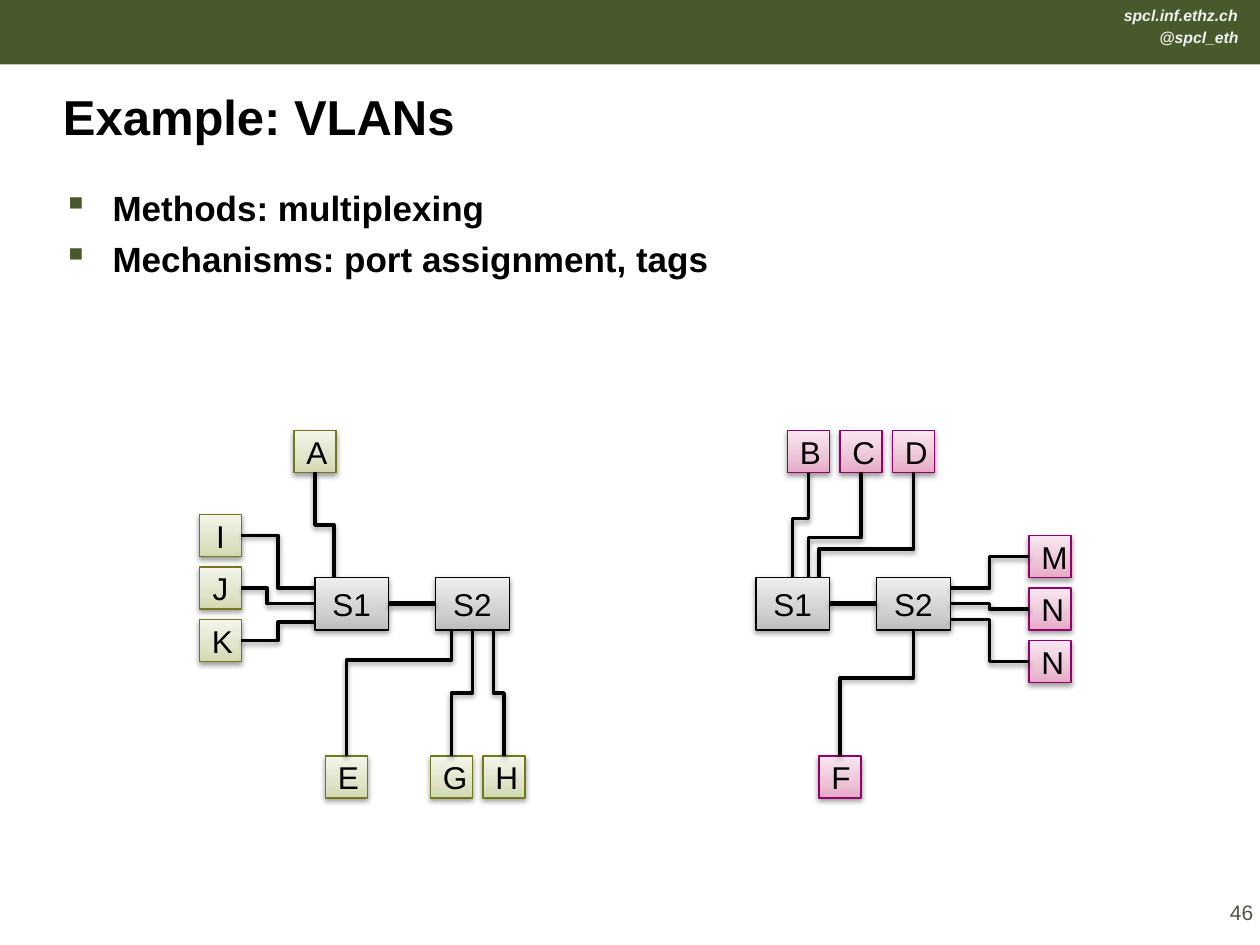
from copy import deepcopy

from lxml import etree
from pptx import Presentation
from pptx import util as u
from pptx.dml.color import RGBColor
from pptx.enum import shapes, text
from pptx.oxml.ns import qn

BLACK = RGBColor(0x00, 0x00, 0x00)
WHITE = RGBColor(0xFF, 0xFF, 0xFF)
HEADER_GREEN = RGBColor(0x48, 0x5A, 0x2C)
HEADER_TEXT = RGBColor(0xF2, 0xF2, 0xF2)
NUMBER_GREY = RGBColor(0x53, 0x53, 0x4B)

# Box styles: outline, then gradient stops from bottom to top
GREEN = (RGBColor(0x71, 0x79, 0x19), [(0, RGBColor(0xD3, 0xD8, 0xB0)),
         (0.35, RGBColor(0xDF, 0xE3, 0xC8)), (1, RGBColor(0xF3, 0xF5, 0xEA))])
PINK = (RGBColor(0x91, 0x01, 0x69), [(0, RGBColor(0xE6, 0xA8, 0xC7)),
        (0.35, RGBColor(0xEC, 0xC3, 0xD7)), (1, RGBColor(0xF9, 0xE7, 0xF0))])
GREY = (BLACK, [(0, RGBColor(0xBD, 0xBD, 0xBD)),
        (0.35, RGBColor(0xD1, 0xD1, 0xD1)), (1, RGBColor(0xEE, 0xEE, 0xEE))])

TITLE = "Example: VLANs"
BULLETS = ["Methods: multiplexing", "Mechanisms: port assignment, tags"]
HEADER_LINES = [("spcl.inf.ethz.ch", 22.38, 0, 2.82), ("@spcl_eth", 23.09, 0.43, 2.13)]

# Diagram positions are in grid units, 240 across the slide
GRID = u.Cm(25.4) / 240
HOST = (8, 8)
SWITCH = (14, 10)
JOINTS = {"top": (4, 0), "left": (0, 4), "bottom": (4, 8), "right": (8, 4)}

# Hosts: name, left, top, side of the wire, port on the switch, bend fraction
VLANS = [
    {"style": GREEN, "S1": (60, 110), "S2": (83, 110),
     "S1 hosts": [("A", 56, 82, "bottom", (63.6, 110), 0.5),
                  ("I", 38, 98, "right", (60, 112), 0.5),
                  ("J", 38, 108, "right", (60, 115), 0.65),
                  ("K", 38, 118, "right", (60, 118.5), 0.5)],
     "S2 hosts": [("E", 62, 144, "top", (86, 120), 0.76),
                  ("G", 82, 144, "top", (90, 120), 0.5),
                  ("H", 92, 144, "top", (94, 120), 0.5)]},
    {"style": PINK, "S1": (144, 110), "S2": (167, 110),
     "S1 hosts": [("B", 150, 82, "bottom", (151, 110), 0.56),
                  ("C", 160, 82, "bottom", (154, 110), 0.38),
                  ("D", 170, 82, "bottom", (156, 110), 0.27)],
     "S2 hosts": [("F", 156, 144, "top", (174, 120), 0.62),
                  ("M", 196, 102, "left", (181, 112), 0.5),
                  ("N", 196, 112, "left", (181, 115), 0.5),
                  ("N", 196, 122, "left", (181, 118), 0.5)]},
]


def units(*values):
    return [round(value * GRID) for value in values]


def write(shape, lines, size, color=BLACK, bold=False, italic=False, bullet=None,
          align=None, anchor=text.MSO_ANCHOR.TOP, wrap=True, insets=None, space=0):
    """Fill a shape with paragraphs that share one format."""
    frame = shape.text_frame
    frame.word_wrap = wrap
    frame.vertical_anchor = anchor
    if insets:
        (frame.margin_left, frame.margin_top,
         frame.margin_right, frame.margin_bottom) = map(u.Cm, insets)
    for index, line in enumerate(lines):
        paragraph = frame.paragraphs[0] if index == 0 else frame.add_paragraph()
        if bullet:
            properties = paragraph._p.get_or_add_pPr()
            properties.set("marL", str(u.Cm(1)))
            properties.set("indent", str(-u.Cm(1)))
            bullet_color = etree.SubElement(properties, qn("a:buClr"))
            etree.SubElement(bullet_color, qn("a:srgbClr"), val=str(HEADER_GREEN))
            etree.SubElement(properties, qn("a:buChar"), char=bullet)
        if index:
            paragraph.space_before = u.Pt(space)
        paragraph.alignment = align
        run = paragraph.add_run()
        run.text = line
        run.font.name = "Arial"
        run.font.size = u.Pt(size)
        run.font.bold = bold
        run.font.italic = italic
        run.font.color.rgb = color


def add_shadow(shape, opacity=38, distance=1.6):
    effects = etree.SubElement(shape._element.spPr, qn("a:effectLst"))
    shadow = etree.SubElement(effects, qn("a:outerShdw"), blurRad=str(u.Pt(3.1)),
                              dist=str(u.Pt(distance)), dir="5400000", rotWithShape="0")
    color = etree.SubElement(shadow, qn("a:srgbClr"), val=str(BLACK))
    etree.SubElement(color, qn("a:alpha"), val=str(opacity * 1000))


def add_box(group, name, position, size, style):
    outline, stops = style
    box = group.shapes.add_shape(shapes.MSO_SHAPE.RECTANGLE, *units(*position, *size))
    box.fill.gradient()
    box.fill.gradient_angle = 90
    stop_list = box._element.spPr.find(".//" + qn("a:gsLst"))
    stop_list.append(deepcopy(stop_list[0]))
    for stop, (place, color) in zip(box.fill.gradient_stops, stops):
        stop.position = place
        stop.color.rgb = color
    box.line.color.rgb = outline
    box.line.width = u.Pt(0.75)
    add_shadow(box)
    write(box, [name], 18, align=text.PP_ALIGN.CENTER, anchor=text.MSO_ANCHOR.MIDDLE)
    return box


def add_wire(group, start, end, bend, vertical):
    """Draw an elbow; a vertical one is laid out flat and then turned."""
    turn = 1 if end[0] > start[0] else -1
    if vertical:
        middle_x, middle_y = (start[0] + end[0]) / 2, (start[1] + end[1]) / 2
        start, end = [(middle_x + turn * (y - middle_y), middle_y - turn * (x - middle_x))
                      for x, y in (start, end)]
    wire = group.shapes.add_connector(shapes.MSO_CONNECTOR.ELBOW, *units(*start, *end))
    properties = wire._element.spPr
    if vertical:
        properties.find(qn("a:xfrm")).set("rot", str(turn * 90 % 360 * 60000))
    guides = properties.find(qn("a:prstGeom")).find(qn("a:avLst"))
    etree.SubElement(guides, qn("a:gd"), name="adj1", fmla=f"val {round(bend * 100000)}")
    wire.line.color.rgb = BLACK
    wire.line.width = u.Pt(2)
    add_shadow(wire)


def add_wires(group, hosts, from_host):
    for _, left, top, side, port, bend in hosts:
        joint = (left + JOINTS[side][0], top + JOINTS[side][1])
        start, end = (joint, port) if from_host else (port, joint)
        add_wire(group, start, end, bend, side in ("top", "bottom"))


def add_vlan(slide, vlan):
    group = slide.shapes.add_group_shape()
    for name, left, top, *_ in vlan["S1 hosts"] + vlan["S2 hosts"]:
        add_box(group, name, (left, top), HOST, vlan["style"])
    second = add_box(group, "S2", vlan["S2"], SWITCH, GREY)
    add_wires(group, vlan["S1 hosts"], from_host=False)
    first = add_box(group, "S1", vlan["S1"], SWITCH, GREY)
    add_wires(group, vlan["S2 hosts"], from_host=True)
    trunk = group.shapes.add_connector(shapes.MSO_CONNECTOR.STRAIGHT, 
                                       *units(*vlan["S1"], *vlan["S2"]))
    trunk.begin_connect(first, 3)
    trunk.end_connect(second, 1)
    trunk.line.color.rgb = BLACK
    trunk.line.width = u.Pt(3)
    add_shadow(trunk, opacity=35, distance=1.8)


def add_text(slide, position, lines, size, **style):
    box = slide.shapes.add_textbox(*map(u.Cm, position))
    write(box, lines, size, **style)
    return box


def main():
    presentation = Presentation()
    presentation.slide_width, presentation.slide_height = u.Cm(25.4), u.Cm(19.05)
    slide = presentation.slides.add_slide(presentation.slide_layouts[6])

    # Header band
    band = slide.shapes.add_shape(shapes.MSO_SHAPE.RECTANGLE, 0, 0, u.Cm(25.4), u.Cm(1.3))
    band.shadow.inherit = False
    band.fill.solid()
    band.fill.fore_color.rgb = HEADER_GREEN
    band.line.fill.background()
    for line, left, top, width in HEADER_LINES:
        add_text(slide, (left, top, width, 0.64), [line], 9, color=HEADER_TEXT,
                 bold=True, italic=True, align=text.PP_ALIGN.RIGHT, wrap=False)

    # Title, slide number and bullets
    title = add_text(slide, (0.89, 1.47, 23.6, 1.47), [TITLE], 28, bold=True,
                     anchor=text.MSO_ANCHOR.BOTTOM, insets=(0.38, 0, 0.41, 0))
    title.fill.solid()
    title.fill.fore_color.rgb = WHITE
    add_text(slide, (24.66, 17.96, 0.74, 1.3), ["46"], 12, color=NUMBER_GREY, wrap=False,
             align=text.PP_ALIGN.CENTER, insets=(0, 0.18, 0, 0))
    add_text(slide, (0.89, 3.76, 23.57, 14.25), BULLETS, 20, bold=True, bullet="▪",
             insets=(0.38, 0, 0.41, 0), space=5)

    # Diagrams
    for vlan in VLANS:
        add_vlan(slide, vlan)
    presentation.save("out.pptx")


if __name__ == "__main__":
    main()
